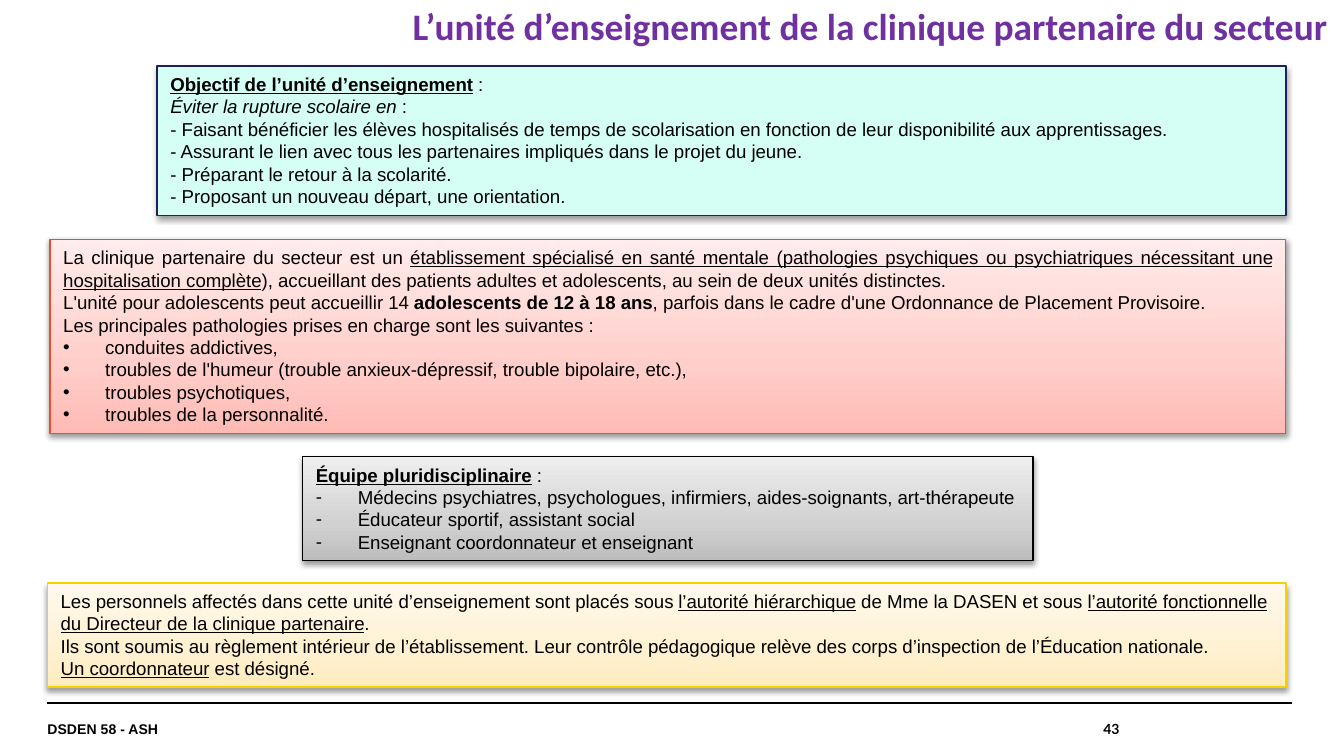
from copy import deepcopy

from lxml import etree
from pptx import Presentation
from pptx.dml.color import RGBColor
from pptx.enum.shapes import MSO_CONNECTOR, MSO_SHAPE
from pptx.enum.text import MSO_ANCHOR, PP_ALIGN
from pptx.oxml.ns import qn
from pptx.util import Pt

LEFT, RIGHT, JUSTIFY = PP_ALIGN.LEFT, PP_ALIGN.RIGHT, PP_ALIGN.JUSTIFY
TOP, MIDDLE = MSO_ANCHOR.TOP, MSO_ANCHOR.MIDDLE
RECTANGLE, STRAIGHT = MSO_SHAPE.RECTANGLE, MSO_CONNECTOR.STRAIGHT

BLACK = RGBColor(0, 0, 0)
PURPLE = RGBColor(0x70, 0x30, 0xA0)
MINT, NAVY = RGBColor(0xD5, 0xFF, 0xF4), RGBColor(0x1F, 0x1F, 0x59)
ORANGE, YELLOW = RGBColor(0xE9, 0x4F, 0x2D), RGBColor(0xF9, 0xD0, 0x00)
PINKS = [RGBColor(0xFF, 0xBA, 0xB4), RGBColor(0xFF, 0xCE, 0xCA), RGBColor(0xFF, 0xEC, 0xEB)]
GREYS = [RGBColor(0xBD, 0xBD, 0xBD), RGBColor(0xD1, 0xD1, 0xD1), RGBColor(0xEE, 0xEE, 0xEE)]
CREAMS = [RGBColor(0xFF, 0xEB, 0xBD), RGBColor(0xFF, 0xF1, 0xD1), RGBColor(0xFF, 0xF9, 0xEE)]
GRADIENT_POSITIONS = [0, 0.35, 1]

PLAIN = {}
BOLD = {"bold": True}
ITALIC = {"italic": True}
UNDERLINE = {"underline": True}
HEADING = {"bold": True, "underline": True}
BODY_FONT = {"name": "Arial", "size": Pt(10)}
INDENT = 22.5


def write_paragraph(paragraph, runs, font_format, color, alignment=LEFT, bullet=None):
    """Fill a paragraph with (text, format) runs, with a hanging bullet if one is given."""
    paragraph.alignment = alignment
    if bullet:
        properties = paragraph._p.get_or_add_pPr()
        properties.set("marL", str(Pt(INDENT)))
        properties.set("indent", str(Pt(-INDENT)))
        etree.SubElement(properties, qn("a:buFont"), typeface="Arial")
        etree.SubElement(properties, qn("a:buChar"), char=bullet)
    for text, run_format in runs:
        run = paragraph.add_run()
        run.text = text
        for attribute, value in (font_format | run_format).items():
            setattr(run.font, attribute, value)
        run.font.color.rgb = color


def add_shadow(shape):
    shape.shadow.inherit = False
    effects = shape._element.spPr.find(qn("a:effectLst"))
    shadow = etree.SubElement(effects, qn("a:outerShdw"), blurRad=str(Pt(3.1)),
                              dist=str(Pt(1.6)), dir="5400000", rotWithShape="0")
    shadow_color = etree.SubElement(shadow, qn("a:srgbClr"), val="000000")
    etree.SubElement(shadow_color, qn("a:alpha"), val="38000")


presentation = Presentation()
presentation.slide_width, presentation.slide_height = Pt(720), Pt(405)
slide = presentation.slides.add_slide(presentation.slide_layouts[5])

# Title
title = slide.shapes.title
title.left, title.top, title.width, title.height = Pt(99.4), Pt(4.3), Pt(612), Pt(22.3)
frame = title.text_frame
margins = {"margin_left": 0, "margin_top": 0, "margin_right": 0, "margin_bottom": 0}
for attribute, value in (margins | {"word_wrap": True, "vertical_anchor": TOP}).items():
    setattr(frame, attribute, value)
write_paragraph(frame.paragraphs[0],
                [("L’unité d’enseignement de la clinique partenaire du secteur", BOLD)],
                {"name": "Calibri", "size": Pt(20)}, PURPLE, RIGHT)
frame.paragraphs[0].line_spacing = 0.9

# Footer
footer_line = slide.shapes.add_connector(STRAIGHT, Pt(25.4), Pt(376.7), Pt(692), Pt(376.7))
footer_line.line.color.rgb = BLACK
footer_line.line.width = Pt(0.8)
etree.SubElement(footer_line._element.spPr, qn("a:effectLst"))

for text, font_name, left, width, alignment in [
    ("DSDEN 58 - ASH", "Arial", 25.4, 459.4, LEFT),
    ("43", "Lato", 493.2, 106.6, RIGHT),
]:
    frame = slide.shapes.add_textbox(Pt(left), Pt(376.7), Pt(width), Pt(28)).text_frame
    for attribute, value in (margins | {"word_wrap": True, "vertical_anchor": MIDDLE}).items():
        setattr(frame, attribute, value)
    write_paragraph(frame.paragraphs[0], [(text, BOLD)],
                    {"name": font_name, "size": Pt(7.5)}, BLACK, alignment)

# Boxes: place, fill, line colour, paragraphs (alignment, bullet, runs)
objective = [
    (JUSTIFY, None, [("Objectif de l’unité d’enseignement", HEADING), (" :", PLAIN)]),
    (LEFT, None, [("Éviter la rupture scolaire en", ITALIC), (" :", PLAIN)]),
] + [(LEFT, None, [(text, PLAIN)]) for text in [
    "- Faisant bénéficier les élèves hospitalisés de temps de scolarisation en fonction "
    "de leur disponibilité aux apprentissages.",
    "- Assurant le lien avec tous les partenaires impliqués dans le projet du jeune.",
    "- Préparant le retour à la scolarité.",
    "- Proposant un nouveau départ, une orientation.",
]]
clinic = [
    (JUSTIFY, None, [
        ("La clinique partenaire du secteur est un ", PLAIN),
        ("établissement spécialisé en santé mentale (pathologies psychiques ou "
         "psychiatriques nécessitant une hospitalisation complète", UNDERLINE),
        ("), accueillant des patients adultes et adolescents, au sein de deux unités "
         "distinctes.", PLAIN)]),
    (JUSTIFY, None, [
        ("L'unité pour adolescents peut accueillir 14 ", PLAIN),
        ("adolescents de 12 à 18 ans", BOLD),
        (", parfois dans le cadre d'une Ordonnance de Placement Provisoire.", PLAIN)]),
    (JUSTIFY, None, [
        ("Les principales pathologies prises en charge sont les suivantes :", PLAIN)]),
] + [(JUSTIFY, "•", [(text, PLAIN)]) for text in [
    "conduites addictives,",
    "troubles de l'humeur (trouble anxieux-dépressif, trouble bipolaire, etc.),",
    "troubles psychotiques,",
    "troubles de la personnalité.",
]]
team = [
    (LEFT, None, [("Équipe pluridisciplinaire", HEADING), (" :", PLAIN)]),
] + [(LEFT, "-", [(text, PLAIN)]) for text in [
    "Médecins psychiatres, psychologues, infirmiers, aides-soignants, art-thérapeute",
    "Éducateur sportif, assistant social",
    "Enseignant coordonnateur et enseignant",
]]
authority = [
    (LEFT, None, [
        ("Les personnels affectés dans cette unité d’enseignement sont placés sous ", PLAIN),
        ("l’autorité hiérarchique", UNDERLINE),
        (" de Mme la DASEN et sous ", PLAIN),
        ("l’autorité fonctionnelle du Directeur de la clinique partenaire", UNDERLINE),
        (".", PLAIN)]),
    (LEFT, None, [
        ("Ils sont soumis au règlement intérieur de l’établissement. Leur contrôle "
         "pédagogique relève des corps d’inspection de l’Éducation nationale.", PLAIN)]),
    (LEFT, None, [("Un coordonnateur", UNDERLINE), (" est désigné.", PLAIN)]),
]

for (left, top, width, height), colors, line_color, paragraphs in [
    ((84.2, 35.4, 604.8, 80), [MINT], NAVY, objective),
    ((26.8, 128.3, 662, 104), PINKS, ORANGE, clinic),
    ((162.1, 244.7, 391.2, 55.6), GREYS, BLACK, team),
    ((25.4, 312.4, 663.5, 55.6), CREAMS, YELLOW, authority),
]:
    box = slide.shapes.add_shape(RECTANGLE, Pt(left), Pt(top), Pt(width), Pt(height))
    if len(colors) == 1:
        box.fill.solid()
        box.fill.fore_color.rgb = colors[0]
    else:
        box.fill.gradient()
        box.fill.gradient_angle = 90
        stop_list = box._element.spPr.find(".//" + qn("a:gsLst"))
        stop_list.append(deepcopy(stop_list[0]))
        for stop, position, color in zip(box.fill.gradient_stops, GRADIENT_POSITIONS, colors):
            stop.position = position
            stop.color.rgb = color
    box.line.color.rgb = line_color
    box.line.width = Pt(0.75)
    add_shadow(box)

    frame = box.text_frame
    frame.word_wrap = True
    frame.vertical_anchor = TOP
    for index, (alignment, bullet, runs) in enumerate(paragraphs):
        paragraph = frame.add_paragraph() if index else frame.paragraphs[0]
        write_paragraph(paragraph, runs, BODY_FONT, BLACK, alignment, bullet)

presentation.save("out.pptx")
